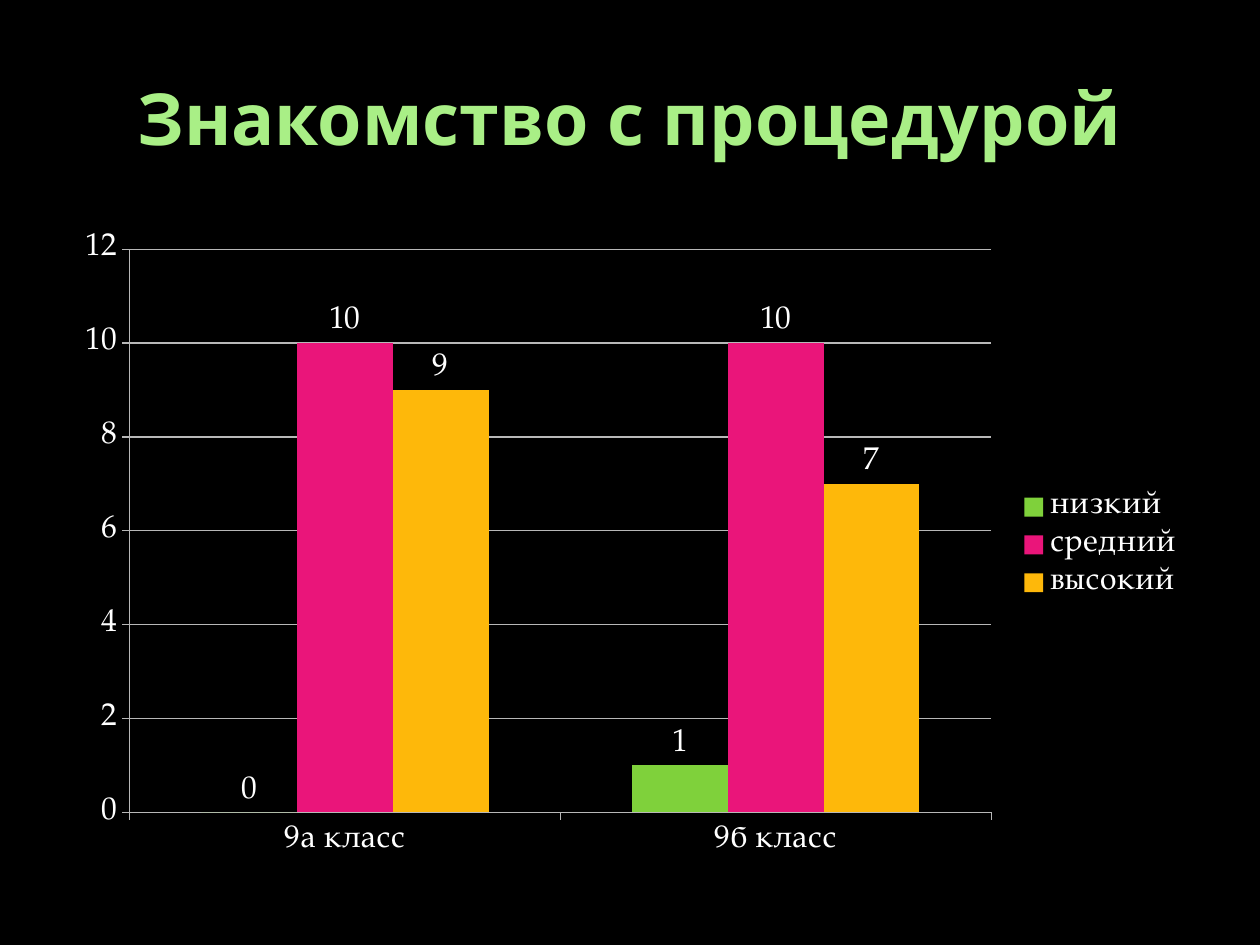
from dataclasses import dataclass

from pptx import Presentation
from pptx.chart.data import CategoryChartData
from pptx.dml.color import RGBColor
from pptx.enum.chart import XL_CHART_TYPE as ChartType
from pptx.enum.chart import XL_LABEL_POSITION as LabelPos
from pptx.enum.chart import XL_LEGEND_POSITION as LegendPos
from pptx.enum.chart import XL_TICK_MARK as Tick
from pptx.enum.text import MSO_ANCHOR as Anchor
from pptx.enum.text import PP_ALIGN as Align
from pptx.util import Inches, Pt


@dataclass(frozen=True)
class Theme:
    background: str = "000000"
    title: str = "A9EF86"
    text: str = "FFFFFF"
    line: str = "B8B8B8"
    levels: tuple = ("7FD13B", "EA157A", "FEB80A")
    title_font: str = "Noto Sans"
    chart_font: str = "TeX Gyre Pagella"
    title_size: int = 41
    chart_size: int = 18


class SlideBuilder:
    COLUMNS, ROWS = 20, 150  # grid cells of 0.5 by 0.05 inches

    def __init__(self, prs, theme):
        self.prs, self.theme = prs, theme
        self.s = prs.slides.add_slide(prs.slide_layouts[5])
        fill = self.s.background.fill
        fill.solid()
        fill.fore_color.rgb = RGBColor.from_string(theme.background)

    def box(self, col, row, cols, rows):
        dx = self.prs.slide_width // self.COLUMNS
        dy = self.prs.slide_height // self.ROWS
        return col * dx, row * dy, cols * dx, rows * dy

    def style(self, font, name, size, color):
        font.name, font.size = name, Pt(size)
        font.color.rgb = RGBColor.from_string(color)

    def title(self, text, *cells):
        sp = self.s.shapes.title
        sp.left, sp.top, sp.width, sp.height = self.box(*cells)
        tf = sp.text_frame
        tf.text = text
        tf.vertical_anchor = Anchor.MIDDLE
        p = tf.paragraphs[0]
        p.alignment = Align.CENTER
        t = self.theme
        self.style(p.font, t.title_font, t.title_size, t.title)
        p.font.bold = True

    def line(self, line_format):
        line_format.width = Pt(0.75)
        line_format.color.rgb = RGBColor.from_string(self.theme.line)

    def column_chart(self, categories, series, *cells):
        data = CategoryChartData(number_format="General")
        data.categories = categories
        for name, values in series.items():
            data.add_series(name, values)
        chart = self.s.shapes.add_chart(
            ChartType.COLUMN_CLUSTERED, *self.box(*cells), data).chart
        t = self.theme
        self.style(chart.font, t.chart_font, t.chart_size, t.text)
        chart.has_title = False

        # Legend
        chart.has_legend = True
        chart.legend.position = LegendPos.RIGHT
        chart.legend.include_in_layout = False

        # Axes and gridlines
        for axis in (chart.category_axis, chart.value_axis):
            axis.major_tick_mark, axis.minor_tick_mark = Tick.OUTSIDE, Tick.NONE
            self.line(axis.format.line)
        value_axis = chart.value_axis
        value_axis.minimum_scale, value_axis.maximum_scale = 0, 12
        value_axis.major_unit = 2
        value_axis.has_major_gridlines = True
        self.line(value_axis.major_gridlines.format.line)

        # Columns and their values
        plot = chart.plots[0]
        plot.gap_width, plot.overlap = 150, 0
        plot.vary_by_categories = False
        for column, color in zip(plot.series, t.levels):
            fill = column.format.fill
            fill.solid()
            fill.fore_color.rgb = RGBColor.from_string(color)
            labels = column.data_labels
            labels.show_value = True
            labels.position = LabelPos.OUTSIDE_END


def main():
    prs = Presentation()
    prs.slide_width, prs.slide_height = Inches(10), Inches(7.5)
    slide = SlideBuilder(prs, Theme())
    slide.title("Знакомство с процедурой", 1, 6, 18, 25)
    slide.column_chart(
        ("9а класс", "9б класс"),
        {"низкий": (0, 1), "средний": (10, 10), "высокий": (9, 7)},
        1, 35, 18, 103)
    prs.save("out.pptx")


if __name__ == "__main__":
    main()
